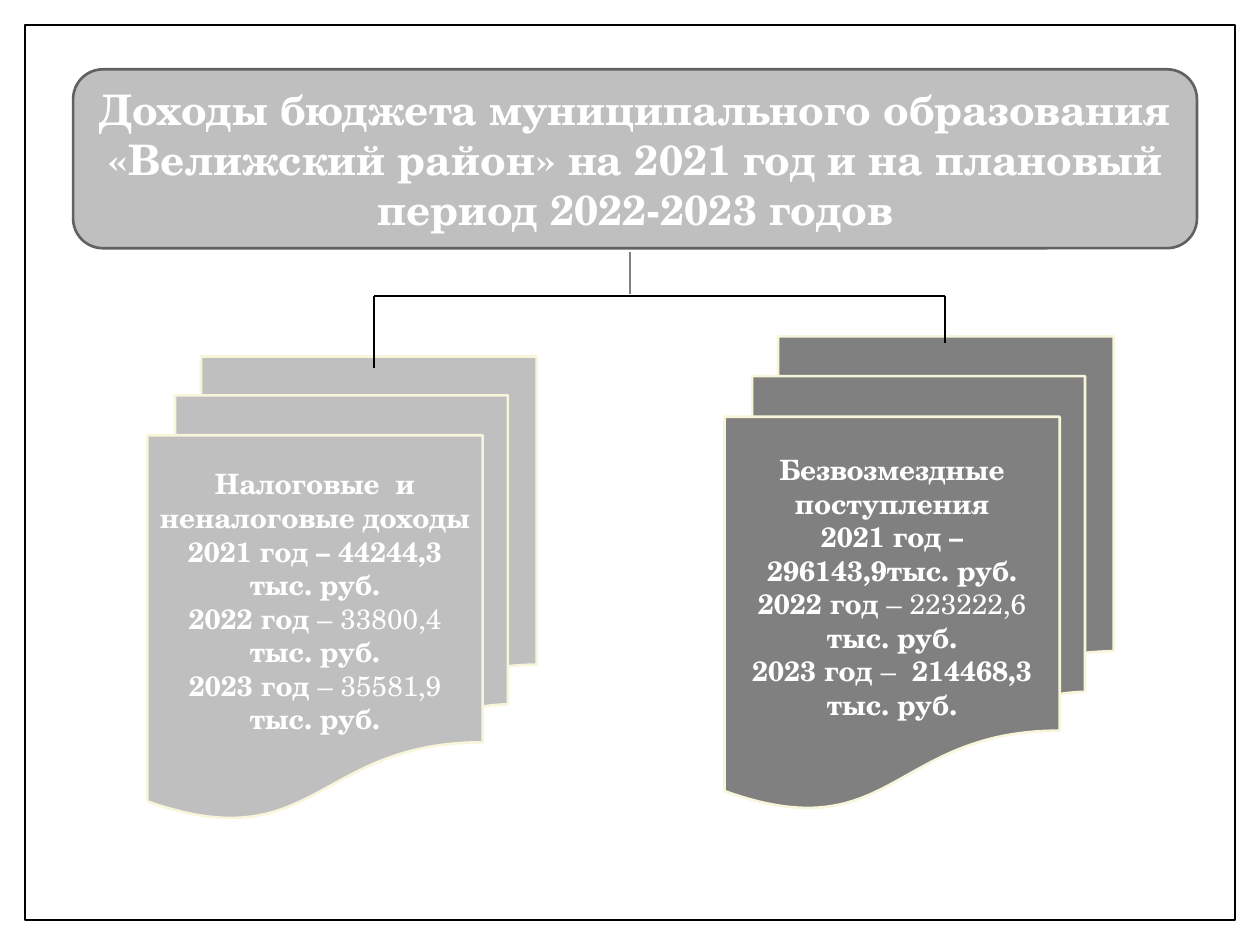
from pptx import Presentation
from pptx.dml.color import RGBColor
from pptx.enum.shapes import MSO_CONNECTOR, MSO_SHAPE
from pptx.enum.text import MSO_ANCHOR, PP_ALIGN
from pptx.oxml.ns import qn
from pptx.util import Inches, Pt
from lxml.etree import SubElement

WHITE = RGBColor(0xFF, 0xFF, 0xFF)
BLACK = RGBColor(0, 0, 0)
SILVER = RGBColor(0xBF, 0xBF, 0xBF)
GRAY = RGBColor(0x80, 0x80, 0x80)
DARK_GRAY = RGBColor(0x61, 0x61, 0x62)
CREAM = RGBColor(0xF7, 0xF6, 0xDA)


class BudgetSlide:
    font_name = "TeX Gyre Schola"

    def __init__(self, deck):
        self.page = deck.slides.add_slide(deck.slide_layouts[6])

    def box(self, kind, place, fill, outline, weight):
        box = self.page.shapes.add_shape(kind, *map(Inches, place))
        box.shadow.inherit = False
        box.fill.solid()
        box.fill.fore_color.rgb = fill
        box.line.color.rgb = outline
        box.line.width = Pt(weight)
        return box

    def text(self, box, paragraphs, size, bottom=0.05):
        frame = box.text_frame
        layout = {
            "word_wrap": True,
            "vertical_anchor": MSO_ANCHOR.MIDDLE,
            "margin_left": Inches(0.08),
            "margin_right": Inches(0.08),
            "margin_bottom": Inches(bottom),
        }
        for name, value in layout.items():
            setattr(frame, name, value)
        for index, spans in enumerate(paragraphs):
            para = frame.paragraphs[0] if index == 0 else frame.add_paragraph()
            para.alignment = PP_ALIGN.CENTER
            for words, bold in spans:
                span = para.add_run()
                span.text = words
                style = {"name": self.font_name, "size": Pt(size), "bold": bold}
                for name, value in style.items():
                    setattr(span.font, name, value)
                span.font.color.rgb = WHITE

    def title(self, words, place):
        box = self.box(MSO_SHAPE.ROUNDED_RECTANGLE, place, SILVER, DARK_GRAY, 1.5)
        self.text(box, [[(words, True)]], 24)

    def documents(self, place, fill, paragraphs):
        box = self.box(MSO_SHAPE.FLOWCHART_MULTIDOCUMENT, place, fill, CREAM, 1.5)
        self.text(box, paragraphs, 16, bottom=0.32)

    def connector(self, start, end, color=BLACK):
        ends = map(Inches, start + end)
        line = self.page.shapes.add_connector(MSO_CONNECTOR.STRAIGHT, *ends)
        line.line.color.rgb = color
        line.line.width = Pt(0.79)
        SubElement(line._element.spPr, qn("a:effectLst"))


def main():
    deck = Presentation()
    deck.slide_width, deck.slide_height = Inches(10), Inches(7.5)
    slide = BudgetSlide(deck)
    slide.box(MSO_SHAPE.RECTANGLE, (0.2, 0.2, 9.6, 7.1), WHITE, BLACK, 1)

    slide.documents((5.75, 2.67, 3.09, 3.75), GRAY, [
        [("Безвозмездные поступления", True)],
        [("2021 год – 296143,9тыс. руб.", True)],
        [("2022 год ", True), ("– 223222,6", False), (" тыс. руб.", True)],
        [("2023 год ", True), ("–", False), ("  214468,3 тыс. руб.", True)],
    ])
    slide.title(
        "Доходы бюджета муниципального образования «Велижский район» "
        "на 2021 год и на плановый период 2022-2023 годов",
        (0.58, 0.55, 8.92, 1.42),
    )
    slide.documents((1.17, 2.83, 3.09, 3.67), SILVER, [
        [("Налоговые  и неналоговые доходы", True)],
        [("2021 год – 44244,3 тыс. руб.", True)],
        [("2022 год ", True), ("– 33800,4", False), (" тыс. руб.", True)],
        [("2023 год ", True), ("– 35581,9 ", False), ("тыс. руб.", True)],
    ])

    left, right, branch = 2.97, 7.5, 2.35
    slide.connector((left, branch), (right, branch))
    for x, bottom in ((left, 2.92), (right, 2.72)):
        slide.connector((x, branch), (x, bottom))
    slide.connector((5, 2), (5, 2.33), GRAY)
    deck.save("out.pptx")


if __name__ == "__main__":
    main()
